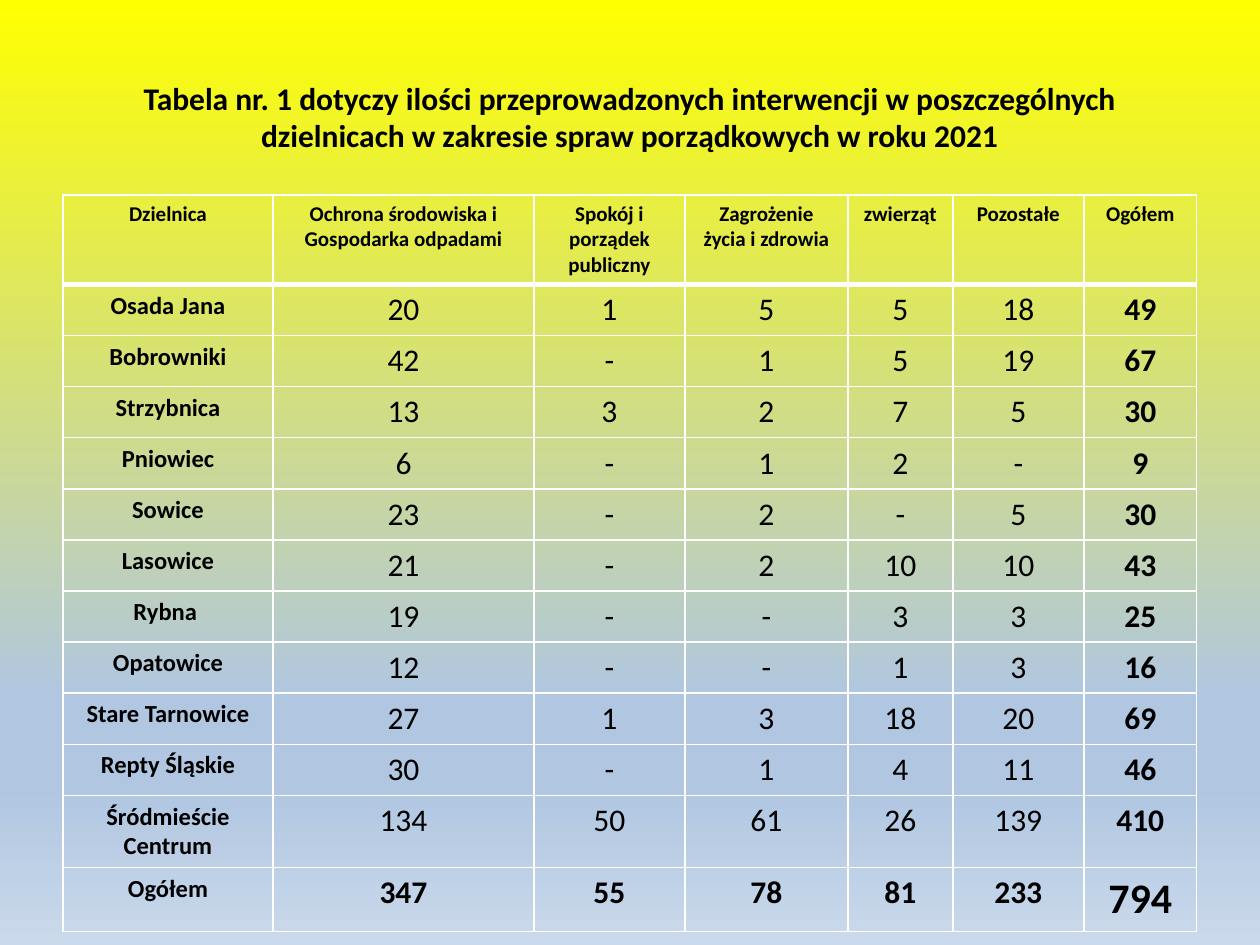
from lxml import etree
from pptx import Presentation, util as u
from pptx.dml.color import RGBColor
from pptx.enum import text
from pptx.oxml.ns import qn

COLOURS = {"text": "000000", "border": "FFFFFF",
           "top": "FFFF00", "sky": "B0C6E1", "bottom": "CAD9EB"}
BACKGROUND = [(0, "top"), (74, "sky"), (83, "sky"), (100, "bottom")]

TITLE = ("Tabela nr. 1 dotyczy ilości przeprowadzonych interwencji w "
         "poszczególnych dzielnicach w zakresie spraw porządkowych w roku 2021")
HEADINGS = ["Dzielnica", "Ochrona środowiska i Gospodarka odpadami",
            "Spokój i porządek publiczny", "Zagrożenie życia i zdrowia",
            "zwierząt", "Pozostałe", "Ogółem"]
DISTRICTS = [
    ["Osada Jana", "20", "1", "5", "5", "18", "49"],
    ["Bobrowniki", "42", "-", "1", "5", "19", "67"],
    ["Strzybnica", "13", "3", "2", "7", "5", "30"],
    ["Pniowiec", "6", "-", "1", "2", "-", "9"],
    ["Sowice", "23", "-", "2", "-", "5", "30"],
    ["Lasowice", "21", "-", "2", "10", "10", "43"],
    ["Rybna ", "19", "-", "-", "3", "3", "25"],
    ["Opatowice", "12", "-", "-", "1", "3", "16"],
    ["Stare Tarnowice", "27", "1", "3", "18", "20", "69"],
    ["Repty Śląskie", "30", "-", "1", "4", "11", "46"],
    ["Śródmieście Centrum", "134", "50", "61", "26", "139", "410"],
]
TOTALS = ["Ogółem", "347", "55", "78", "81", "233", "794"]
COLUMN_WIDTHS = [210, 261, 151, 163, 105, 131, 113]
ROW_HEIGHT = 51


def px(length):
    return u.Emu(round(length * 914400 / 126))


class InterventionSlide:
    font = "Calibri"

    def __init__(self, deck):
        self.slide = deck.slides.add_slide(deck.slide_layouts[5])

    def background(self, stops):
        fill = self.slide.background.fill
        fill.gradient()
        fill.gradient_angle = 270
        stop_list = next(self.slide.element.iter(qn("a:gsLst")))
        for old_stop in list(stop_list):
            stop_list.remove(old_stop)
        for percent, colour in stops:
            stop = etree.SubElement(stop_list, qn("a:gs"), pos=str(percent * 1000))
            etree.SubElement(stop, qn("a:srgbClr"), val=COLOURS[colour])

    def set_text(self, frame, words, size, bold):
        frame.text = words
        paragraph = frame.paragraphs[0]
        paragraph.alignment = text.PP_ALIGN.CENTER
        font = paragraph.runs[0].font
        font.name, font.size, font.bold = self.font, u.Pt(size), bold
        font.color.rgb = RGBColor.from_string(COLOURS["text"])

    def title(self, words, left, top, width, height):
        heading = self.slide.shapes.title
        heading.left, heading.top = px(left), px(top)
        heading.width, heading.height = px(width), px(height)
        self.set_text(heading.text_frame, words, 18, True)
        heading.text_frame.vertical_anchor = text.MSO_ANCHOR.MIDDLE

    def borders(self, cell, **widths):
        properties = cell._tc.get_or_add_tcPr()
        for side in "LRTB":
            line = etree.SubElement(properties, qn(f"a:ln{side}"),
                                    w=str(int(u.Pt(widths.get(side, 1)))))
            fill = etree.SubElement(line, qn("a:solidFill"))
            etree.SubElement(fill, qn("a:srgbClr"), val=COLOURS["border"])

    def table(self, rows, left, top, column_widths, row_height):
        grid = self.slide.shapes.add_table(
            len(rows), len(column_widths), px(left), px(top),
            px(sum(column_widths)), px(row_height * len(rows))).table
        for column, width in zip(grid.columns, column_widths):
            column.width = px(width)
        last_row, last_column = len(rows) - 1, len(column_widths) - 1
        for r, row in enumerate(rows):
            grid.rows[r].height = px(row_height)
            for c, words in enumerate(row):
                # Headings are small, district names medium, the grand total large
                if r == 0:
                    size = 12
                elif c == 0:
                    size = 14
                else:
                    size = 24 if (r, c) == (last_row, last_column) else 18
                bold = r in (0, last_row) or c in (0, last_column)
                cell = grid.cell(r, c)
                self.set_text(cell.text_frame, words, size, bold)
                self.borders(cell, B=3 if r == 0 else 1, T=3 if r == 1 else 1)
                cell.fill.background()


def main():
    deck = Presentation()
    deck.slide_width, deck.slide_height = px(1260), px(945)
    page = InterventionSlide(deck)
    page.background(BACKGROUND)

    # Title above the table
    page.title(TITLE, 63, 38, 1134, 157)

    # Interventions by district; rows grow to fit their text
    page.table([HEADINGS, *DISTRICTS, TOTALS], 63, 195, COLUMN_WIDTHS, ROW_HEIGHT)

    deck.save("out.pptx")


if __name__ == "__main__":
    main()
